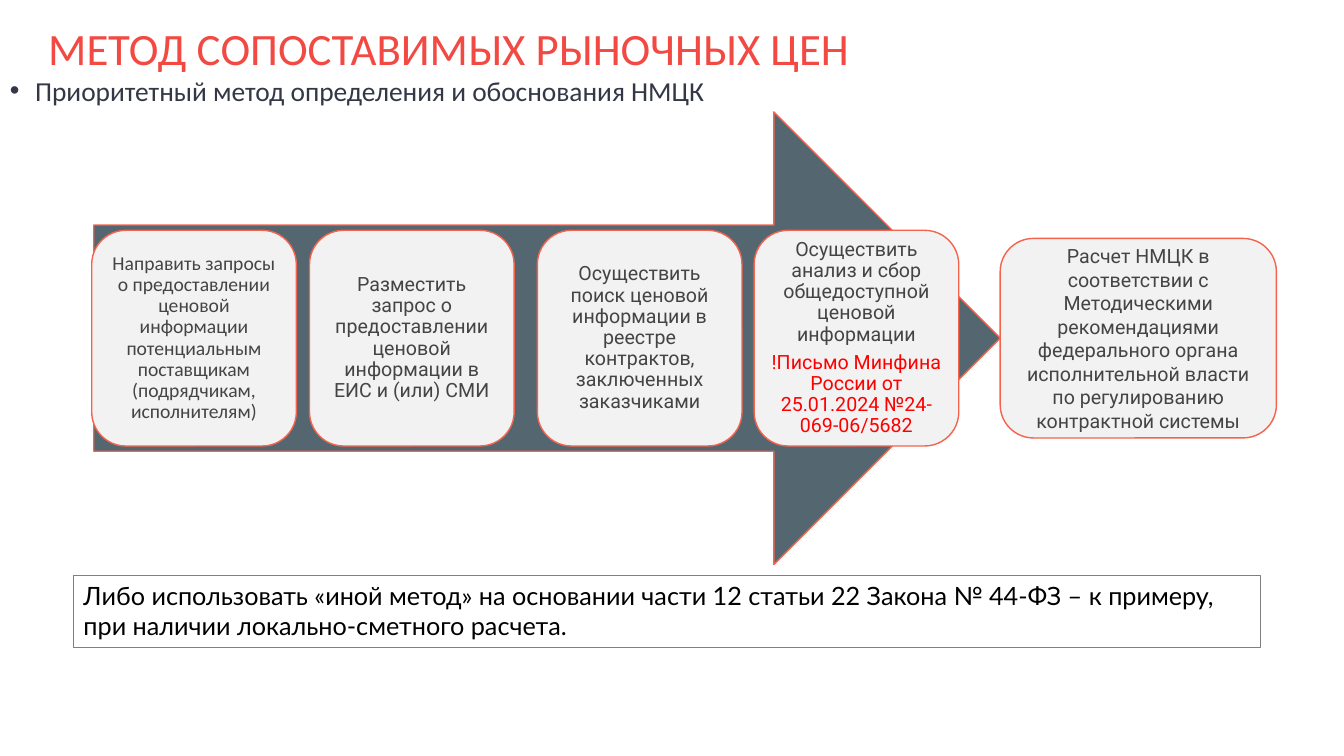
from lxml import etree
from pptx import Presentation
from pptx.dml.color import RGBColor
from pptx.enum.shapes import MSO_SHAPE
from pptx.enum.text import MSO_ANCHOR, PP_ALIGN
from pptx.oxml.ns import qn
from pptx.util import Inches, Pt

RECT, ROUND, ARROW = MSO_SHAPE.RECTANGLE, MSO_SHAPE.ROUNDED_RECTANGLE, MSO_SHAPE.RIGHT_ARROW
TOP, MIDDLE = MSO_ANCHOR.TOP, MSO_ANCHOR.MIDDLE
LEFT, CENTER = PP_ALIGN.LEFT, PP_ALIGN.CENTER

COLORS = {
    "title": "F24942", "lead": "343846", "arrow": "546670", "outline": "F5634D",
    "card": "F2F2F2", "text": "444444", "alert": "FF0000", "note": "000000",
    "frame": "7F7F7F",
}
STEPS = [
    (0, "Calibri", ["Направить запросы о предоставлении ценовой информации потенциальным "
                    "поставщикам (подрядчикам, исполнителям)"]),
    (2.16, "Roboto", ["Разместить запрос о предоставлении ценовой информации в ЕИС и (или) СМИ"]),
    (4.42, "Roboto", ["Осуществить поиск ценовой информации в реестре контрактов, "
                      "заключенных заказчиками"]),
    (6.57, "Roboto", ["Осуществить анализ и сбор общедоступной ценовой информации",
                      "!Письмо Минфина России от 25.01.2024 №24-069-06/5682"]),
]
RESULT = ("Расчет НМЦК в соответствии с Методическими рекомендациями федерального органа "
          "исполнительной власти по регулированию контрактной системы")


def rgb(name):
    return RGBColor.from_string(COLORS[name])


def add_box(slide, kind, box, fill=None, line=None, width=1):
    s = slide.shapes.add_shape(kind, *map(Inches, box))
    s.shadow.inherit = False
    if fill:
        s.fill.solid()
        s.fill.fore_color.rgb = rgb(fill)
    else:
        s.fill.background()
    if line:
        s.line.color.rgb = rgb(line)
        s.line.width = Pt(width)
    return s


def set_frame(s, anchor=TOP, inset=(0.1, 0.05, 0.1, 0.05)):
    tf = s.text_frame
    left, top, right, bottom = map(Inches, inset)
    values = {"word_wrap": True, "vertical_anchor": anchor, "margin_left": left,
              "margin_top": top, "margin_right": right, "margin_bottom": bottom}
    for name, value in values.items():
        setattr(tf, name, value)
    return tf


def write(p, text, font, size, color, align=LEFT, spacing=1.0):
    p.alignment = align
    p.line_spacing = spacing
    r = p.add_run()
    r.text = text
    for name, value in {"name": font, "size": Pt(size)}.items():
        setattr(r.font, name, value)
    r.font.color.rgb = rgb(color)


def add_heading(slide, x, y):
    # Title
    s = slide.shapes.add_textbox(Inches(x + 0.38), Inches(y), Inches(11.45), Inches(0.72))
    write(set_frame(s).paragraphs[0], "МЕТОД СОПОСТАВИМЫХ РЫНОЧНЫХ ЦЕН",
          "Calibri", 32, "title", spacing=0.9)
    # Bulleted lead
    s = slide.shapes.add_textbox(Inches(x), Inches(y + 0.56), Inches(8.2), Inches(0.49))
    p = set_frame(s).paragraphs[0]
    pPr = p._p.get_or_add_pPr()
    pPr.set("marL", str(Inches(0.25)))
    pPr.set("indent", str(-Inches(0.25)))
    etree.SubElement(pPr, qn("a:buFont")).set("typeface", "Arial")
    etree.SubElement(pPr, qn("a:buChar")).set("char", "•")
    write(p, "Приоритетный метод определения и обоснования НМЦК",
          "Calibri", 19.6, "lead", spacing=0.7)


def add_card(slide, box, font, texts, spacing):
    s = add_box(slide, ROUND, box, "card", "outline")
    tf = set_frame(s, MIDDLE, (0.04,) * 4)
    for i, text in enumerate(texts):
        p = tf.add_paragraph() if i else tf.paragraphs[0]
        write(p, text, font, 14, "alert" if i else "text", CENTER, spacing)
        p.space_after = Pt(5 if len(texts) > 1 else 0)


def add_process(slide, x, y, w, h):
    # Arrow behind the steps
    add_box(slide, ARROW, (x, y, w, h), "arrow", "outline")
    # Result at the arrow tip
    middle = y + h / 2
    add_card(slide, (x + w, middle - 0.99, 2.74, 1.98), "Roboto", [RESULT], 1.0)
    # Steps along the shaft
    for offset, font, texts in STEPS:
        add_card(slide, (x - 0.02 + offset, middle - 1.07, 2.03, 2.14), font, texts, 0.9)


def add_note(slide, x, y, w, h):
    s = add_box(slide, RECT, (x, y, w, h), line="frame", width=0.75)
    write(set_frame(s).paragraphs[0],
          "Либо использовать «иной метод» на основании части 12 статьи 22 Закона № 44-ФЗ – "
          "к примеру, при наличии локально-сметного расчета.", "Lato", 18, "note")


def main():
    prs = Presentation()
    prs.slide_width, prs.slide_height = Inches(13.33), Inches(7.5)
    slide = prs.slides.add_slide(prs.slide_layouts[6])
    add_heading(slide, 0, 0.22)
    add_process(slide, 0.93, 1.11, 8.99, 4.49)
    add_note(slide, 0.73, 5.71, 11.77, 0.71)
    prs.save("out.pptx")


if __name__ == "__main__":
    main()
